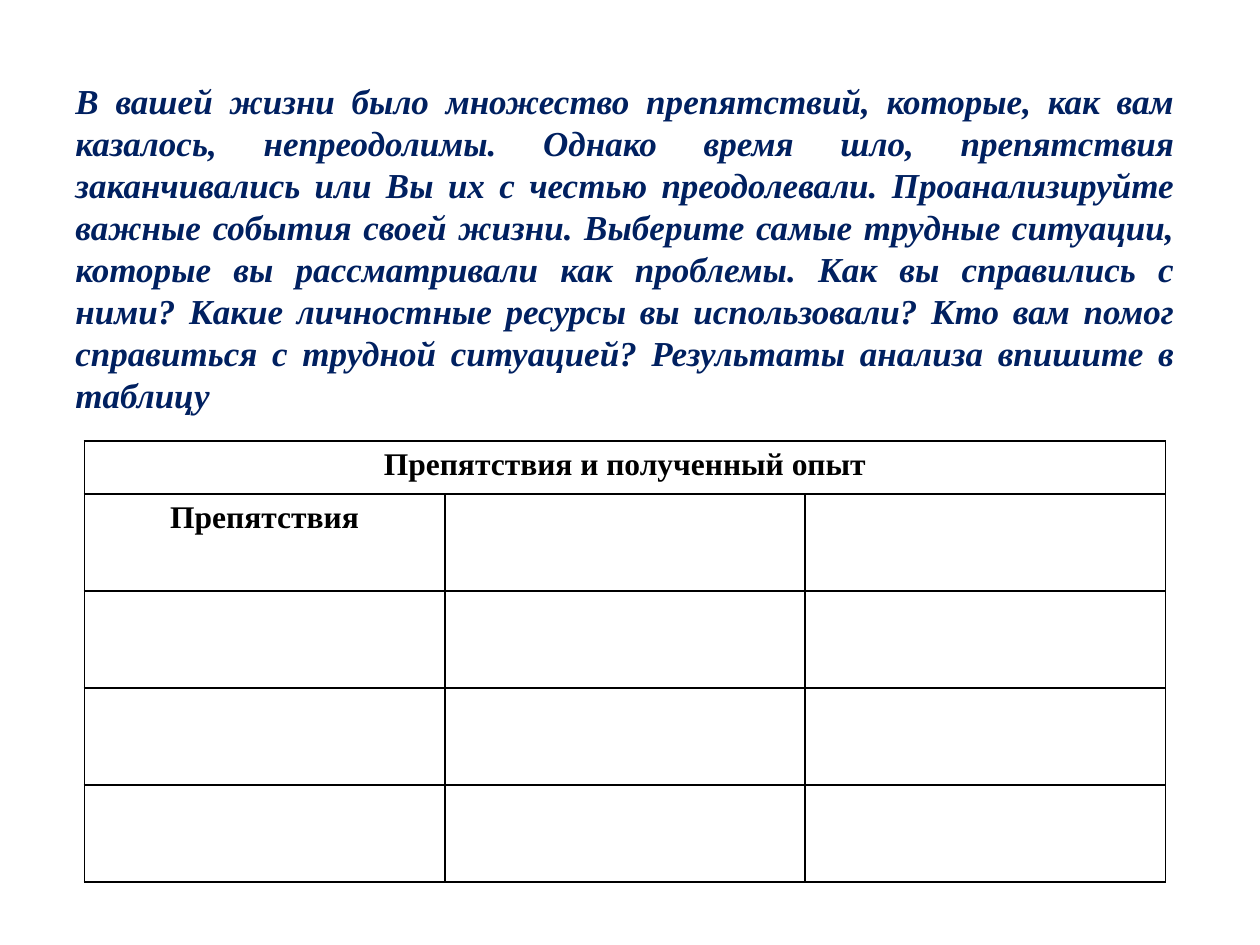
from dataclasses import dataclass

from lxml.etree import SubElement
from pptx import Presentation
from pptx.dml.color import RGBColor
from pptx.enum.text import MSO_AUTO_SIZE, PP_ALIGN
from pptx.oxml.ns import qn
from pptx.util import Inches, Pt


@dataclass(frozen=True)
class Theme:
    """Colours, font and type sizes of the slide."""

    font: str = "Times New Roman"
    task_color: str = "002060"
    table_color: str = "000000"
    task_size: int = 20
    task_leading: int = 24
    table_size: int = 18
    border_width: int = 1


class SlideBuilder:
    """Adds styled elements to the current slide."""

    def __init__(self, slide, theme):
        self.slide = slide
        self.theme = theme

    def format_paragraph(self, paragraph, size, color, align, italic=False):
        paragraph.alignment = align
        for run in paragraph.runs:
            run.font.name = self.theme.font
            run.font.size = Pt(size)
            run.font.bold = True
            run.font.italic = italic
            run.font.color.rgb = RGBColor.from_string(color)

    def add_task(self, wording, left, top, width, height):
        frame = self.slide.shapes.add_textbox(
            Inches(left), Inches(top), Inches(width), Inches(height)
        ).text_frame
        frame.word_wrap = True
        frame.auto_size = MSO_AUTO_SIZE.SHAPE_TO_FIT_TEXT
        frame.text = wording
        paragraph = frame.paragraphs[0]
        paragraph.line_spacing = Pt(self.theme.task_leading)
        self.format_paragraph(paragraph, self.theme.task_size, self.theme.task_color,
                              PP_ALIGN.JUSTIFY, italic=True)

    def add_borders(self, cell):
        properties = cell._tc.get_or_add_tcPr()
        for side in ("a:lnL", "a:lnR", "a:lnT", "a:lnB"):
            border = SubElement(properties, qn(side), w=str(Pt(self.theme.border_width)))
            fill = SubElement(border, qn("a:solidFill"))
            SubElement(fill, qn("a:srgbClr"), val=self.theme.table_color)

    def add_worksheet(self, heading, first_column, left, top, width, row_heights, columns):
        table = self.slide.shapes.add_table(
            len(row_heights), columns, Inches(left), Inches(top),
            Inches(width), Inches(sum(row_heights))
        ).table
        table.first_row = False
        table.horz_banding = False
        for column in table.columns:
            column.width = Inches(width / columns)
        for row, height in zip(table.rows, row_heights):
            row.height = Inches(height)
        table.cell(0, 0).merge(table.cell(0, columns - 1))
        table.cell(0, 0).text = heading
        table.cell(1, 0).text = first_column
        for cell in table.iter_cells():
            self.add_borders(cell)
            cell.fill.background()
            self.format_paragraph(cell.text_frame.paragraphs[0], self.theme.table_size,
                                  self.theme.table_color, PP_ALIGN.CENTER)


TASK = (
    "В вашей жизни было множество препятствий, которые, как вам казалось, непреодолимы. "
    "Однако время шло, препятствия заканчивались или Вы их с честью преодолевали. "
    "Проанализируйте важные события своей жизни. Выберите самые трудные ситуации, "
    "которые вы рассматривали как проблемы. Как вы справились с ними? "
    "Какие личностные ресурсы вы использовали? Кто вам помог справиться с трудной "
    "ситуацией? Результаты анализа впишите в таблицу"
)


def main():
    presentation = Presentation()
    presentation.slide_width = Inches(10)
    presentation.slide_height = Inches(7.5)
    slide = presentation.slides.add_slide(presentation.slide_layouts[6])
    builder = SlideBuilder(slide, Theme())
    builder.add_task(TASK, 0.5, 0.58, 8.92, 2.79)
    builder.add_worksheet("Препятствия и полученный опыт", "Препятствия",
                          0.67, 3.5, 8.58, [0.42] + [0.77] * 4, 3)
    presentation.save("out.pptx")


if __name__ == "__main__":
    main()
